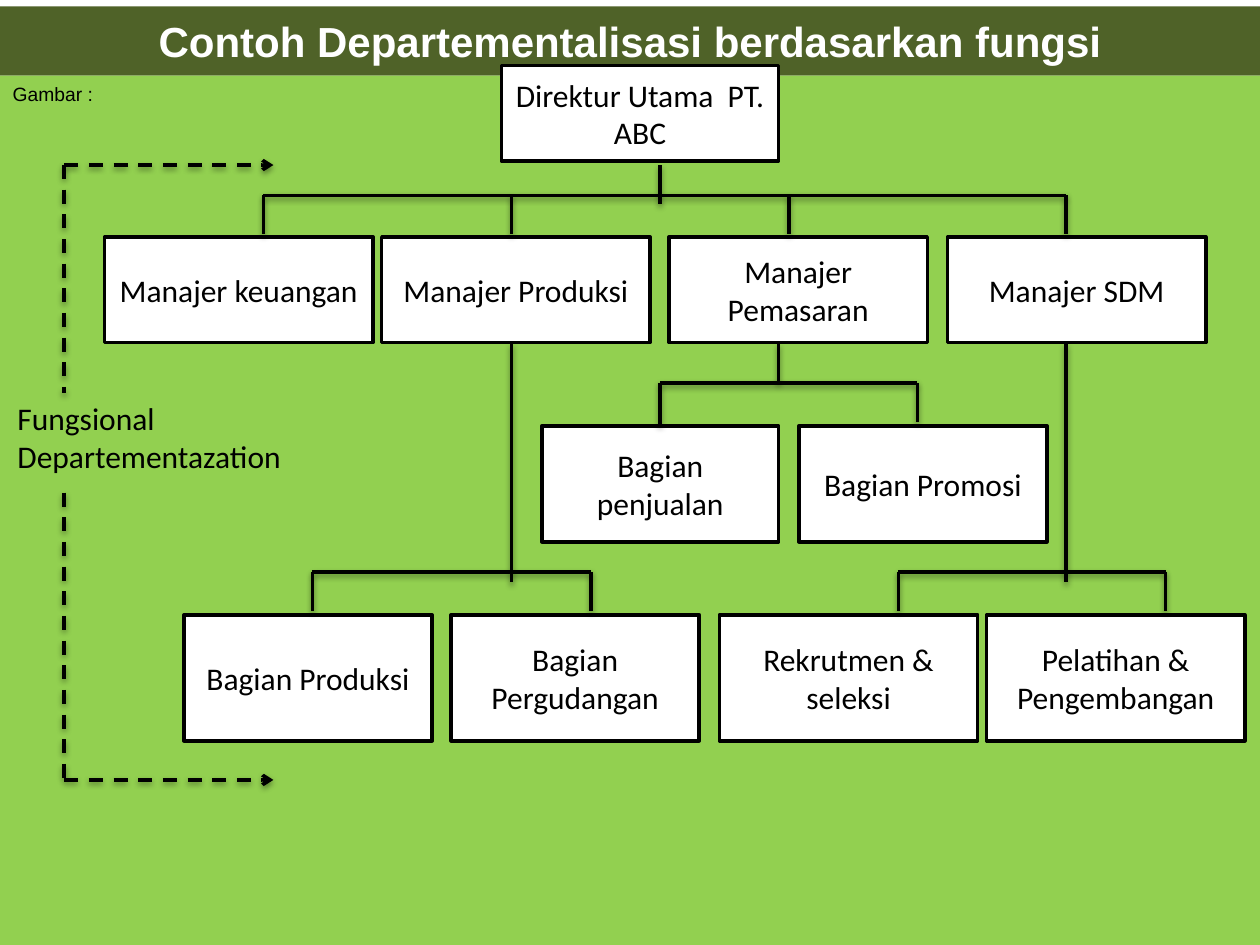
from dataclasses import dataclass

from lxml import etree
from pptx import Presentation
from pptx.dml.color import RGBColor
from pptx.enum.dml import MSO_LINE
from pptx.enum.shapes import MSO_CONNECTOR, MSO_SHAPE
from pptx.enum.text import MSO_ANCHOR, MSO_AUTO_SIZE, PP_ALIGN
from pptx.oxml import parse_xml
from pptx.oxml.ns import qn
from pptx.util import Inches, Pt

RECT = MSO_SHAPE.RECTANGLE
STRAIGHT = MSO_CONNECTOR.STRAIGHT
DASH = MSO_LINE.DASH
CENTER, LEFT = PP_ALIGN.CENTER, PP_ALIGN.LEFT
MIDDLE, TOP = MSO_ANCHOR.MIDDLE, MSO_ANCHOR.TOP
NO_FIT = MSO_AUTO_SIZE.NONE
FIT_SHAPE = MSO_AUTO_SIZE.SHAPE_TO_FIT_TEXT


@dataclass(frozen=True)
class Theme:
    black: RGBColor = RGBColor(0x00, 0x00, 0x00)
    white: RGBColor = RGBColor(0xFF, 0xFF, 0xFF)
    olive: RGBColor = RGBColor(0x4F, 0x62, 0x28)
    green: RGBColor = RGBColor(0x92, 0xD0, 0x50)
    title: Pt = Pt(24)
    label: Pt = Pt(18)
    note: Pt = Pt(11)
    line: Pt = Pt(2)
    head_font: str = "Arial"
    box_font: str = "Calibri"


theme = Theme()
SHADOW = (
    '<a:effectLst xmlns:a="http://schemas.openxmlformats.org/drawingml/2006/main">'
    '<a:outerShdw blurRad="40000" dist="20000" dir="5400000" rotWithShape="0">'
    '<a:srgbClr val="000000"><a:alpha val="38000"/></a:srgbClr>'
    '</a:outerShdw></a:effectLst>'
)


def write(sp, text, font, size, color, align, anchor, bold=False):
    tf = sp.text_frame
    tf.text = text
    tf.vertical_anchor = anchor
    for p in tf.paragraphs:
        p.alignment = align
        for r in p.runs:
            r.font.name, r.font.size, r.font.bold = font, size, bold
            r.font.color.rgb = color


def connect(x1, y1, x2, y2, dashed=False, arrow=False):
    cx = shapes.add_connector(STRAIGHT, Inches(x1), Inches(y1), Inches(x2), Inches(y2))
    cx.line.color.rgb = theme.black
    cx.line.width = theme.line
    if dashed:
        cx.line.dash_style = DASH
    if arrow:
        etree.SubElement(cx.line._get_or_add_ln(), qn("a:tailEnd"), type="arrow")
    cx._element.spPr.append(parse_xml(SHADOW))
    return cx


prs = Presentation()
prs.slide_width, prs.slide_height = Inches(10), Inches(7.5)
s = prs.slides.add_slide(prs.slide_layouts[1])
shapes = s.shapes

title, body = shapes.title, s.placeholders[1]
for sp, top, height, color in (
    (title, 0.05, 0.55, theme.olive),
    (body, 0.6, 6.9, theme.green),
):
    sp.left, sp.top, sp.width, sp.height = Inches(0), Inches(top), Inches(10), Inches(height)
    sp.fill.solid()
    sp.fill.fore_color.rgb = color
    sp.text_frame.auto_size = NO_FIT
write(title, "Contoh Departementalisasi berdasarkan fungsi", theme.head_font,
      theme.title, theme.white, CENTER, MIDDLE, bold=True)
write(body, "Gambar :", theme.head_font, theme.note, theme.black, LEFT, TOP)
pPr = body.text_frame.paragraphs[0]._p.get_or_add_pPr()
pPr.set("marL", str(Inches(0.38)))
pPr.set("indent", str(Inches(-0.38)))
etree.SubElement(pPr, qn("a:buNone"))

levels = [
    (0.52, 0.76, [("Direktur Utama  PT. ABC", 3.98, 2.2)]),
    (1.88, 0.84, [("Manajer keuangan", 0.83, 2.13), ("Manajer Produksi", 3.03, 2.13),
                  ("Manajer Pemasaran", 5.31, 2.05), ("Manajer SDM", 7.52, 2.05)]),
    (3.38, 0.92, [("Bagian penjualan", 4.3, 1.88), ("Bagian Promosi", 6.34, 1.97)]),
    (4.88, 1, [("Bagian Produksi", 1.46, 1.97), ("Bagian Pergudangan", 3.58, 1.97),
               ("Rekrutmen & seleksi", 5.71, 2.05), ("Pelatihan & Pengembangan", 7.83, 2.05)]),
]
boxes = {}
for top, height, row in levels:
    for text, left, width in row:
        sp = shapes.add_shape(RECT, Inches(left), Inches(top), Inches(width), Inches(height))
        sp.shadow.inherit = False
        sp.fill.solid()
        sp.fill.fore_color.rgb = theme.white
        sp.line.color.rgb = theme.black
        sp.line.width = theme.line
        write(sp, text, theme.box_font, theme.label, theme.black, CENTER, MIDDLE)
        boxes[text] = sp

branches = [
    (5.24, 1.31, 1.62, 1.55, [2.09, 4.06, 6.26, 8.46]),
    (6.18, 2.73, 3.04, 3.04, [5.24, 7.28]),
    (4.06, 2.73, 4.62, 4.54, [2.48, 4.69]),
    (8.46, 2.73, 4.62, 4.54, [7.13, 9.25]),
]
drops = {}
for stem_x, stem_top, stem_end, bar_y, xs in branches:
    connect(xs[0], bar_y, xs[-1], bar_y)
    connect(stem_x, stem_top, stem_x, stem_end)
    for x in xs:
        drops[x, bar_y] = connect(x, bar_y, x, bar_y + 0.31)
drops[5.24, 3.04].end_connect(boxes["Bagian penjualan"], 0)

tb = shapes.add_textbox(Inches(0.04), Inches(3.12), Inches(2.32), Inches(0.71))
write(tb, "Fungsional\nDepartementazation", theme.box_font, theme.label, theme.black, LEFT, TOP)
tb.text_frame.word_wrap = False
tb.text_frame.auto_size = FIT_SHAPE

for y1, y2, arrow_y in ((1.31, 3.12, 1.31), (3.91, 6.19, 6.19)):
    connect(0.51, y1, 0.51, y2, dashed=True)
    connect(0.51, arrow_y, 2.17, arrow_y, dashed=True, arrow=True)

prs.save("out.pptx")
